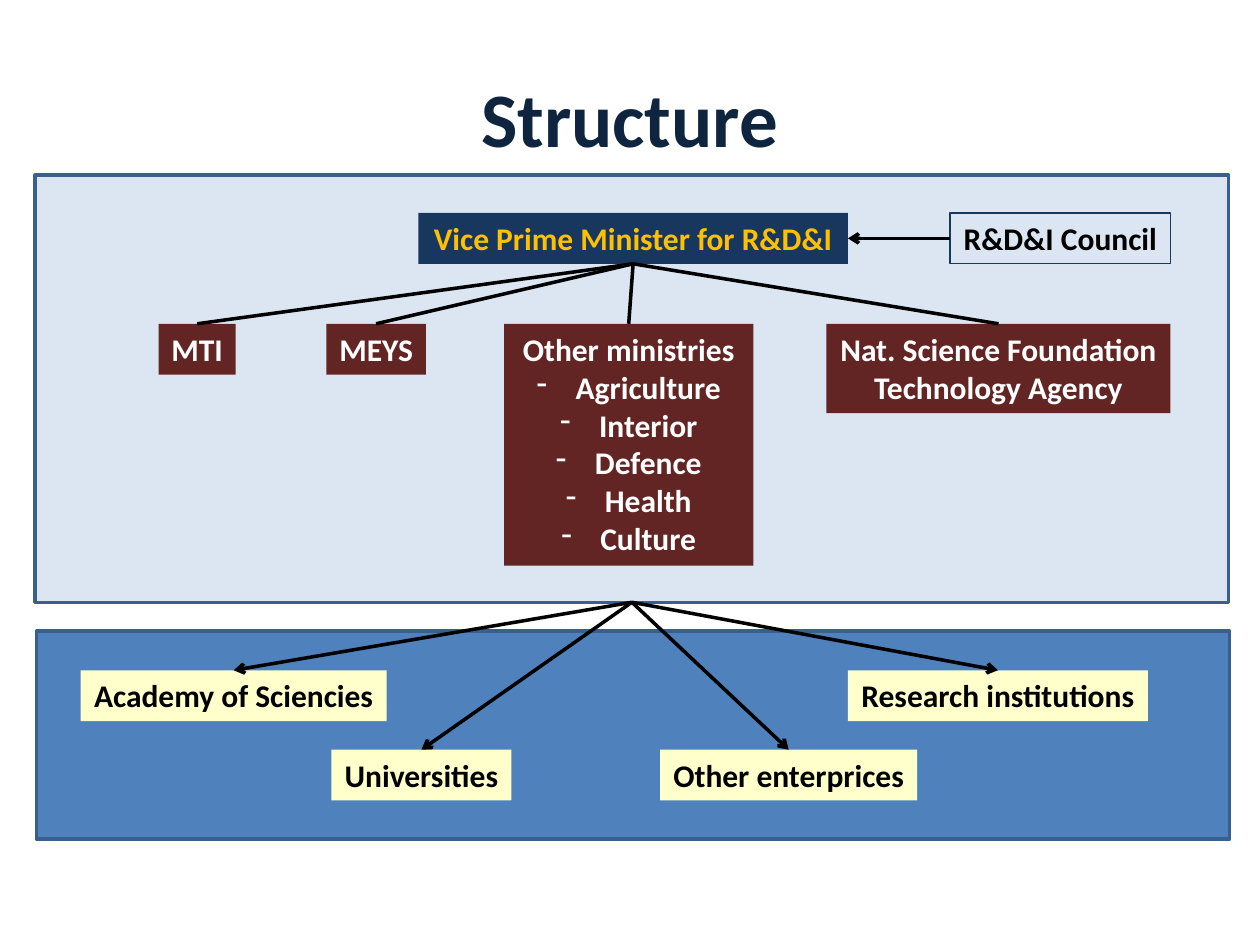
from dataclasses import dataclass

from lxml import etree
from pptx import Presentation
from pptx.dml.color import RGBColor
from pptx.enum.shapes import MSO_CONNECTOR, MSO_SHAPE
from pptx.enum.text import MSO_ANCHOR, MSO_AUTO_SIZE, PP_ALIGN
from pptx.oxml.ns import qn
from pptx.util import Inches, Pt

RECTANGLE = MSO_SHAPE.RECTANGLE
STRAIGHT = MSO_CONNECTOR.STRAIGHT
CENTER = PP_ALIGN.CENTER
MIDDLE, TOP_ANCHOR = MSO_ANCHOR.MIDDLE, MSO_ANCHOR.TOP
FIT_SHAPE, NO_FIT = MSO_AUTO_SIZE.SHAPE_TO_FIT_TEXT, MSO_AUTO_SIZE.NONE
TOP, LEFT, BOTTOM, RIGHT = range(4)  # connection sites of a rectangle

# Grid: 100 columns by 75 rows of square cells
CELL = Inches(0.1)
COLUMNS, ROWS = 100, 75
LABEL_ROWS = 4.04  # height of a one-line label


@dataclass(frozen=True)
class Theme:
    font: str = "Calibri"
    title_size: float = 44
    label_size: float = 18
    line_width: float = 2
    thin_line: float = 0.75
    title: str = "0F243E"
    panel_line: str = "3A5F8C"
    government: str = "DCE6F2"
    performers: str = "4F81BD"
    navy: str = "17375E"
    gold: str = "FFC000"
    maroon: str = "632523"
    cream: str = "FFFFCC"
    white: str = "FFFFFF"
    black: str = "000000"


THEME = Theme()


@dataclass(frozen=True)
class Box:
    left: float
    top: float
    width: float
    height: float

    def inner(self, left, top, width, height=LABEL_ROWS):
        """Box placed relative to this one."""
        return Box(self.left + left, self.top + top, width, height)

    def lengths(self):
        return [round(cells * CELL) for cells in
                (self.left, self.top, self.width, self.height)]


def add_rectangle(slide, box, fill=None, line=None, width=THEME.line_width):
    shape = slide.shapes.add_shape(RECTANGLE, *box.lengths())
    shape.shadow.inherit = False
    if fill:
        shape.fill.solid()
        shape.fill.fore_color.rgb = RGBColor.from_string(fill)
    else:
        shape.fill.background()
    if line:
        shape.line.color.rgb = RGBColor.from_string(line)
        shape.line.width = Pt(width)
    else:
        shape.line.fill.background()
    return shape


def add_dash_bullet(paragraph):
    properties = paragraph._p.get_or_add_pPr()
    properties.set("marL", str(Inches(0.31)))
    properties.set("indent", str(-Inches(0.31)))
    etree.SubElement(properties, qn("a:buChar")).set("char", "-")


def write_text(shape, text, *, color, size=THEME.label_size, bullets=(),
               wrap=False, anchor=TOP_ANCHOR, autofit=FIT_SHAPE):
    frame = shape.text_frame
    frame.word_wrap = wrap
    frame.auto_size = autofit
    frame.vertical_anchor = anchor
    lines = text.split("\n")
    for index, content in enumerate([*lines, *bullets]):
        paragraph = frame.add_paragraph() if index else frame.paragraphs[0]
        paragraph.alignment = CENTER
        if index >= len(lines):
            add_dash_bullet(paragraph)
        run = paragraph.add_run()
        run.text = content
        run.font.name = THEME.font
        run.font.size = Pt(size)
        run.font.bold = True
        run.font.color.rgb = RGBColor.from_string(color)


def add_label(slide, box, text, color, fill=None, line=None, **text_format):
    shape = add_rectangle(slide, box, fill, line, THEME.thin_line)
    write_text(shape, text, color=color, **text_format)
    return shape


def connect(slide, start, start_side, end, end_side, arrow=False):
    connector = slide.shapes.add_connector(STRAIGHT, 0, 0, 0, 0)
    connector.begin_connect(start, start_side)
    connector.end_connect(end, end_side)
    connector.line.color.rgb = RGBColor.from_string(THEME.black)
    connector.line.width = Pt(THEME.line_width)
    if arrow:
        line = connector.line._get_or_add_ln()
        etree.SubElement(line, qn("a:tailEnd")).set("type", "arrow")
    etree.SubElement(connector._element.spPr, qn("a:effectLst"))


def add_title(slide, box, text):
    shape = slide.shapes.add_textbox(*box.lengths())
    write_text(shape, text, color=THEME.title, size=THEME.title_size,
               wrap=True, anchor=MIDDLE, autofit=NO_FIT)


def add_government(slide, box):
    """Upper panel: minister, council and ministries. Returns the panel."""
    panel = add_rectangle(slide, box, THEME.government, THEME.panel_line)

    # Minister and advisory council
    minister = add_label(slide, box.inner(30.4, 3, 34.1),
                         "Vice Prime Minister for R&D&I", THEME.gold, THEME.navy)
    council = add_label(slide, box.inner(72.6, 3, 17.5), "R&D&I Council",
                        THEME.black, line=THEME.navy)
    connect(slide, council, LEFT, minister, RIGHT, arrow=True)

    # Ministries and agencies: left, width, height, text, bullets
    departments = ["Agriculture", "Interior", "Defence", "Health", "Culture"]
    bodies = [
        (9.8, 6.1, LABEL_ROWS, "MTI", ()),
        (23.1, 7.9, LABEL_ROWS, "MEYS", ()),
        (37.2, 19.8, 19.2, "Other ministries", departments),
        (62.8, 27.3, 7.1, "Nat. Science Foundation\nTechnology Agency", ()),
    ]
    for left, width, height, text, bullets in bodies:
        body = add_label(slide, box.inner(left, 11.8, width, height), text,
                         THEME.white, THEME.maroon,
                         bullets=bullets, wrap=bool(bullets))
        connect(slide, minister, BOTTOM, body, TOP)
    return panel


def add_performers(slide, box, government_box):
    """Lower panel of research performers, with the government above it."""
    add_rectangle(slide, box, THEME.performers, THEME.panel_line)
    government = add_government(slide, government_box)
    upper_row, lower_row = 3.1, 9.4
    performers = [
        (3.5, upper_row, 24.3, "Academy of Sciencies"),
        (23.4, lower_row, 14.3, "Universities"),
        (49.5, lower_row, 20.4, "Other enterprices"),
        (64.4, upper_row, 23.8, "Research institutions"),
    ]
    for left, top, width, text in performers:
        performer = add_label(slide, box.inner(left, top, width), text,
                              THEME.black, THEME.cream)
        connect(slide, government, BOTTOM, performer, TOP, arrow=True)


def main():
    presentation = Presentation()
    presentation.slide_width = COLUMNS * CELL
    presentation.slide_height = ROWS * CELL
    slide = presentation.slides.add_slide(presentation.slide_layouts[6])
    add_title(slide, Box(5, 3, 90, 12.5), "Structure")
    add_performers(slide, Box(2.9, 50.1, 94.7, 16.5),
                   government_box=Box(2.8, 13.9, 94.7, 33.9))
    presentation.save("out.pptx")


if __name__ == "__main__":
    main()
